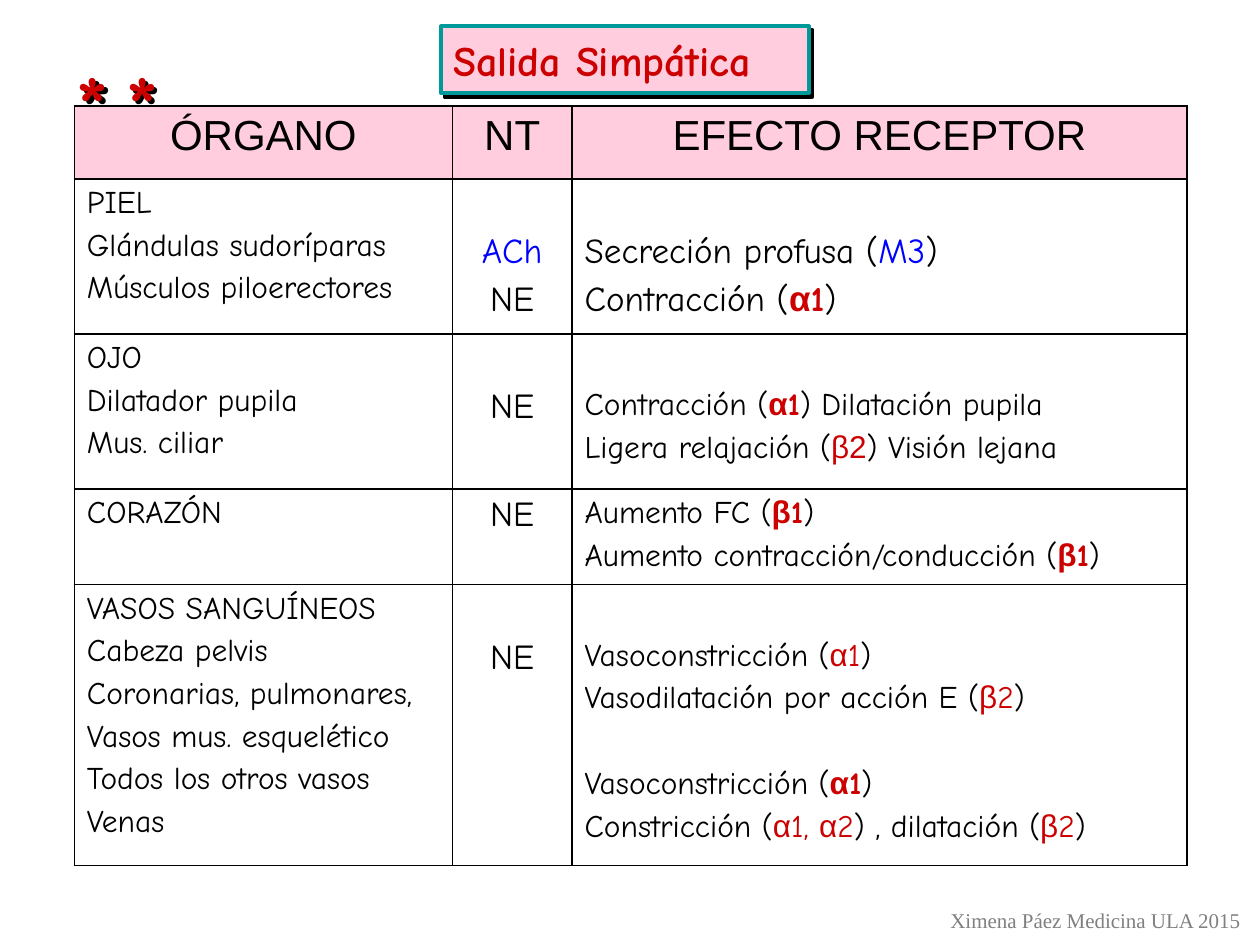
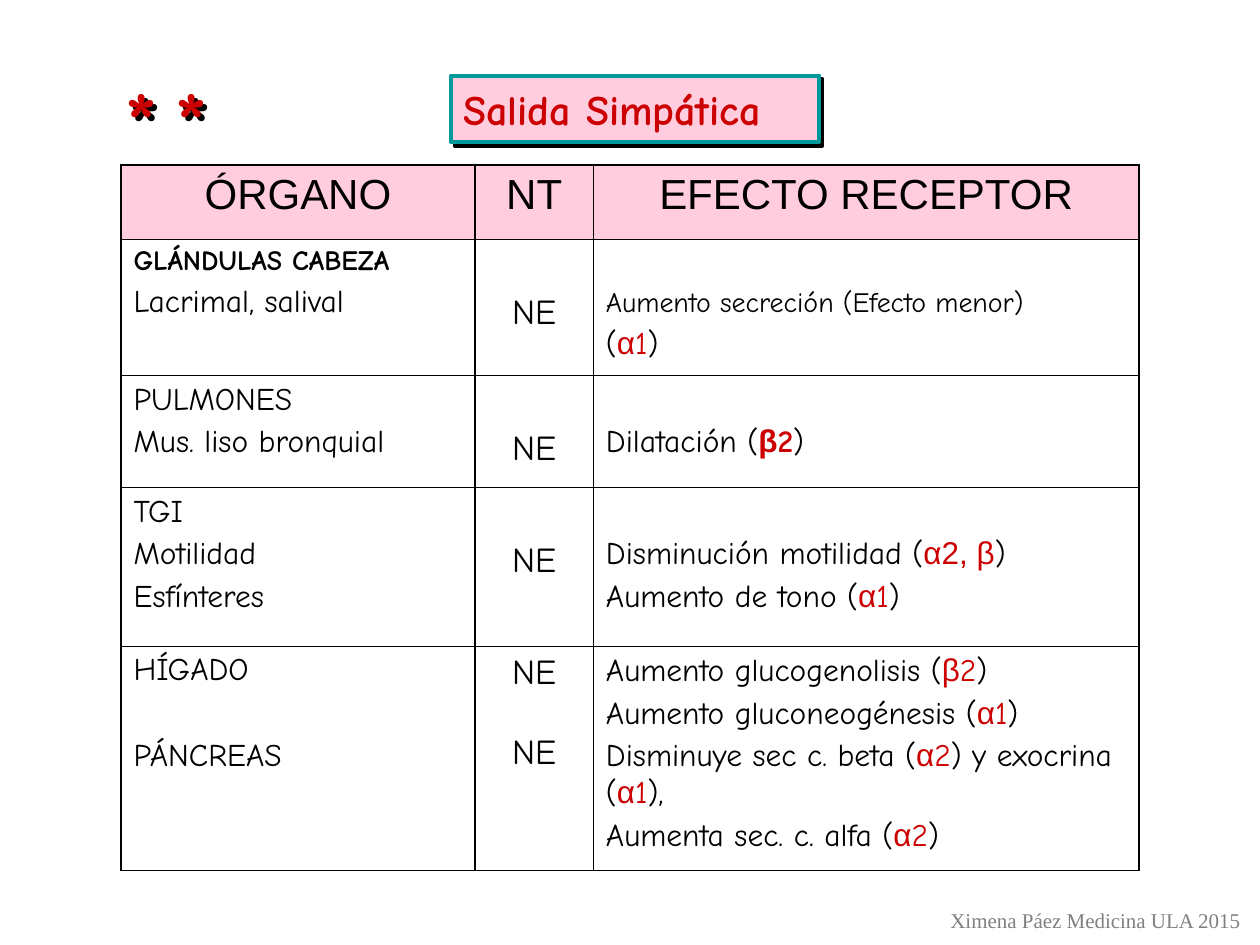
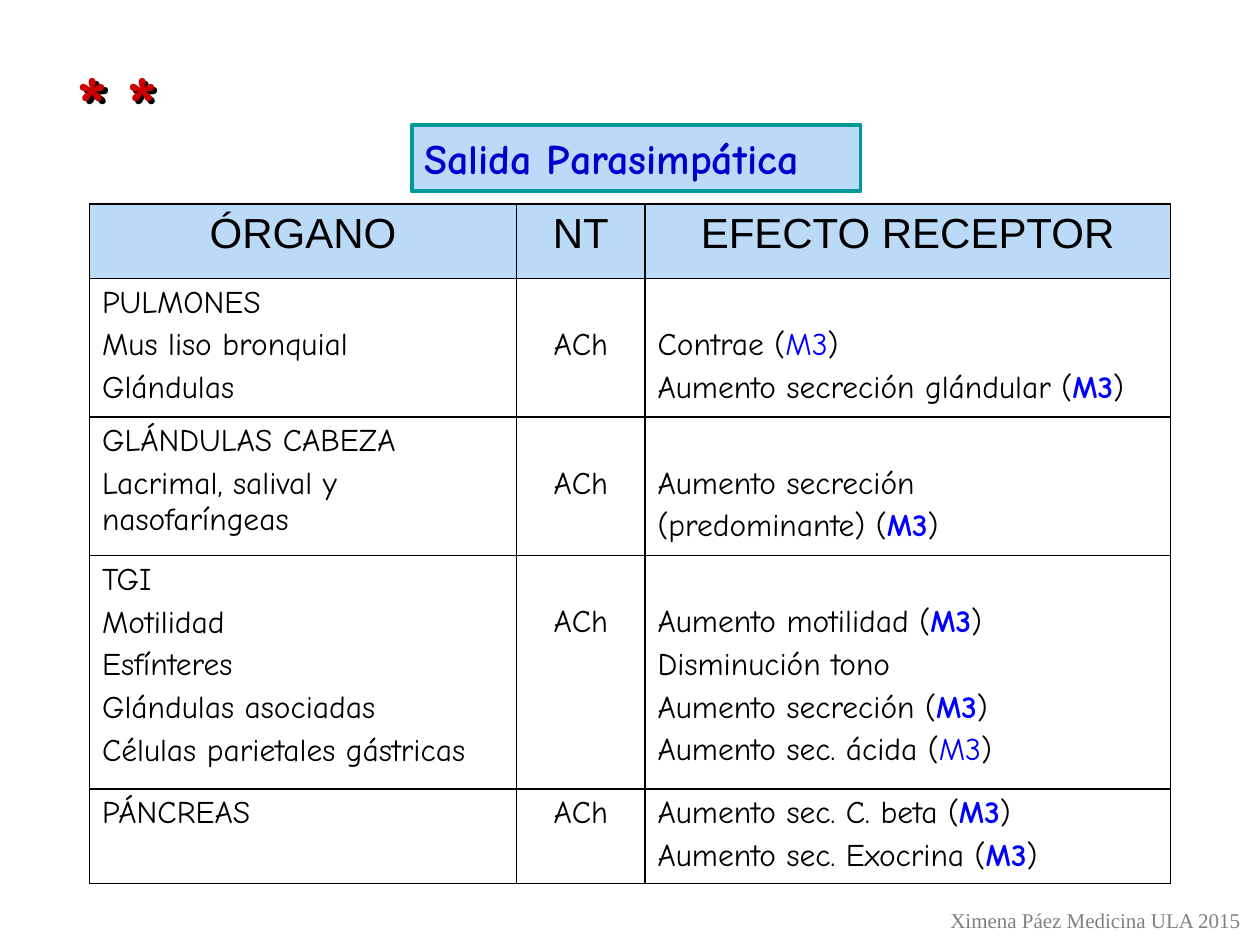
from itertools import groupby

from lxml import etree
from pptx import Presentation
from pptx import util as u
from pptx.dml.color import RGBColor
from pptx.enum import shapes, text
from pptx.oxml.ns import qn

BLACK = RGBColor(0x00, 0x00, 0x00)
RED = RGBColor(0xCC, 0x00, 0x00)
BLUE = RGBColor(0x00, 0x00, 0xFF)
NAVY = RGBColor(0x00, 0x00, 0xCC)
TEAL = RGBColor(0x00, 0x99, 0x99)
GRAY = RGBColor(0x80, 0x80, 0x80)
PINK = RGBColor(0xFF, 0xCD, 0xDE)
SKY = RGBColor(0xBB, 0xDA, 0xF7)

HAND, SANS, SERIF = "Comic Neue", "Arial", "Times New Roman"
GREEK = "αβ"
HEADINGS = ("ÓRGANO", "NT", "EFECTO RECEPTOR")
COLUMNS, ROWS = 100, 75
LINE, GAP = 1.15, 0.2  # line height and paragraph gap, as shares of the text size


class Sheet:
    """The shared style and the slide being filled, on a grid of 100 by 75."""

    def __init__(self):
        self.deck = Presentation()
        self.deck.slide_width, self.deck.slide_height = u.Inches(10), u.Inches(7.5)
        self.slide = None

    def across(self, columns):
        return round(self.deck.slide_width * columns / COLUMNS)

    def down(self, rows):
        return round(self.deck.slide_height * rows / ROWS)

    def place(self, left, top, width, height):
        return self.across(left), self.down(top), self.across(width), self.down(height)

    def start(self):
        self.slide = self.deck.slides.add_slide(self.deck.slide_layouts[6])

    def span(self, para, words, size, color=BLACK, font=HAND, bold=False):
        run = para.add_run()
        run.text = words
        run.font.size, run.font.name, run.font.bold = u.Pt(size), font, bold
        run.font.color.rgb = color

    def drop_shadow(self, shape):
        shape.shadow.inherit = False
        effects = shape.element.spPr.find(qn("a:effectLst"))
        shadow = etree.SubElement(effects, qn("a:outerShdw"), dist=str(u.Pt(2.8)),
                                  dir="2700000", algn="ctr", rotWithShape="0")
        etree.SubElement(shadow, qn("a:srgbClr"), val=str(BLACK))

    def title(self, words, place, fill, color, shadow):
        box = self.slide.shapes.add_shape(shapes.MSO_SHAPE.RECTANGLE, *self.place(*place))
        box.shadow.inherit = False
        box.fill.solid()
        box.fill.fore_color.rgb = fill
        box.line.color.rgb, box.line.width = TEAL, u.Pt(2.25)
        if shadow:
            self.drop_shadow(box)
        frame = box.text_frame
        frame.word_wrap = True
        frame.vertical_anchor = text.MSO_ANCHOR.MIDDLE
        frame.paragraphs[0].alignment = text.PP_ALIGN.LEFT
        self.span(frame.paragraphs[0], words, 24, color, bold=True)

    def label(self, words, place, size, color, font, align, bold=False):
        box = self.slide.shapes.add_textbox(*self.place(*place))
        box.text_frame.word_wrap = False
        para = box.text_frame.paragraphs[0]
        para.alignment = align
        self.span(para, words, size, color, font, bold)
        return box

    def stars(self, left, top):
        for step in range(2):
            star = self.label("*", (left + 3.95 * step, top, 5.5, 9), 48, RED, HAND,
                              text.PP_ALIGN.LEFT, bold=True)
            self.drop_shadow(star)

    def footer(self):
        self.label("Ximena Páez Medicina ULA 2015", (74.3, 71.5, 25.3, 3), 12, GRAY,
                   SERIF, text.PP_ALIGN.CENTER)

    def marked(self, para, line, size):
        """Receptors stand between bars; * makes a part bold, = sets it all in Arial."""
        for index, part in enumerate(line.split("|")):
            bold, plain = part.startswith("*"), part.startswith("=")
            part = part.lstrip("*=")
            color = BLACK
            if index % 2:
                color = BLUE if part in ("M3", "ACh") else RED
            for greek, letters in groupby(part, lambda letter: letter in GREEK):
                font = SANS if greek or plain else HAND
                self.span(para, "".join(letters), size, color, font, bold)

    def fill_cell(self, cell, lines, size, align):
        """A number among the lines skips one line of that text size."""
        para, skipped = None, 0
        for line in lines:
            if isinstance(line, int):
                skipped = line
                continue
            points, words = line if isinstance(line, tuple) else (size, line)
            space = GAP * points + LINE * skipped
            if para is None:
                para = cell.text_frame.paragraphs[0]
                if skipped:
                    cell.margin_top = u.Inches(0.05) + u.Pt(space)
            else:
                para = cell.text_frame.add_paragraph()
                para.space_before = u.Pt(space + GAP * skipped)
            para.alignment = align
            self.marked(para, words, points)
            skipped = 0

    def borders(self, cell):
        properties = cell._tc.get_or_add_tcPr()
        for index, side in enumerate(("lnL", "lnR", "lnT", "lnB")):
            edge = etree.Element(qn("a:" + side), w=str(u.Pt(1)))
            fill = etree.SubElement(edge, qn("a:solidFill"))
            etree.SubElement(fill, qn("a:srgbClr"), val=str(BLACK))
            properties.insert(index, edge)

    def table(self, left, top, widths, heights, fill, sizes, organs):
        place = self.place(left, top, sum(widths), sum(heights))
        table = self.slide.shapes.add_table(len(heights), len(widths), *place).table
        table.first_row = table.horz_banding = False
        for column, width in zip(table.columns, widths):
            column.width = self.across(width)
        for row, height in zip(table.rows, heights):
            row.height = self.down(height)
        for cell, heading in zip(table.rows[0].cells, HEADINGS):
            cell.fill.solid()
            cell.fill.fore_color.rgb = fill
            para = cell.text_frame.paragraphs[0]
            para.alignment = text.PP_ALIGN.CENTER
            self.span(para, heading, 24, font=SANS)
        aligns = (text.PP_ALIGN.LEFT, text.PP_ALIGN.CENTER, text.PP_ALIGN.LEFT)
        for row, organ in enumerate(organs, 1):
            for column, lines in enumerate(organ):
                cell = table.cell(row, column)
                cell.fill.background()
                self.fill_cell(cell, lines, sizes[column], aligns[column])
        for cell in table.iter_cells():
            self.borders(cell)


SKIN_TO_VESSELS = [
    (["PIEL", "Glándulas sudoríparas", "Músculos piloerectores"],
     [20, "|ACh|", "NE"],
     [20, (20, "Secreción profusa (|M3|)"), (20, "Contracción (|*α1|)")]),
    (["OJO", "Dilatador pupila", "Mus. ciliar"],
     [20, "NE"],
     [20, "Contracción (|*α1|) Dilatación pupila",
      "Ligera relajación (|=β2|) Visión lejana"]),
    (["CORAZÓN"],
     ["NE"],
     ["Aumento FC (|*β1|)", "Aumento contracción/conducción (|*β1|)"]),
    (["VASOS SANGUÍNEOS", "Cabeza pelvis", "Coronarias, pulmonares,",
      "Vasos mus. esquelético", "Todos los otros vasos", "Venas"],
     [20, "NE"],
     [20, "Vasoconstricción (|α1|)", "Vasodilatación por acción E (|β2|)", 18,
      "Vasoconstricción (|*α1|)", "Constricción (|α1, α2|) , dilatación (|β2|)"]),
]

GLANDS_TO_PANCREAS = [
    ([(16, "*GLÁNDULAS CABEZA"), "Lacrimal, salival"],
     [20, "NE"],
     [18, (16, "Aumento secreción (Efecto menor)"), "(|α1|)"]),
    (["PULMONES", "Mus. liso bronquial"],
     [20, "NE"],
     [18, "Dilatación (|*β2|)"]),
    (["TGI", "Motilidad", "Esfínteres"],
     [20, "NE"],
     [18, "Disminución motilidad (|=α2, β|)", "Aumento de tono (|α1|)"]),
    (["HÍGADO", 18, "PÁNCREAS"],
     ["NE", 14, "NE"],
     ["Aumento glucogenolisis (|β2|)", "Aumento gluconeogénesis (|α1|)",
      "Disminuye sec c. beta (|α2|) y exocrina (|α1|),",
      "Aumenta sec. c. alfa (|α2|)"]),
]

PARASYMPATHETIC = [
    (["PULMONES", "Mus liso bronquial", "Glándulas"],
     [18, "ACh"],
     [18, "Contrae (|M3|)", "Aumento secreción glándular (|*M3|)"]),
    (["GLÁNDULAS CABEZA", "Lacrimal, salival y nasofaríngeas"],
     [18, "ACh"],
     [18, "Aumento secreción", "(predominante) (|*M3|)"]),
    (["TGI", "Motilidad", "Esfínteres", "Glándulas asociadas",
      "Células parietales gástricas"],
     [18, "ACh"],
     [18, "Aumento motilidad (|*M3|)", "Disminución tono",
      "Aumento secreción (|*M3|)", "Aumento sec. ácida (|M3|)"]),
    (["PÁNCREAS"],
     ["ACh"],
     ["Aumento sec. C. beta (|*M3|)", "Aumento sec. Exocrina (|*M3|)"]),
]


def main():
    sheet = Sheet()

    sheet.start()
    sheet.title("Salida Simpática", (35, 2.1, 29.2, 5.3), PINK, RED, shadow=True)
    sheet.table(5.9, 8.4, (30, 9.5, 48.8), (5.8, 12.3, 12.3, 7.6, 22.3), PINK,
                (18, 20, 18), SKIN_TO_VESSELS)
    sheet.stars(5.1, 3.6)
    sheet.footer()

    sheet.start()
    sheet.table(9.6, 13.1, (28.1, 9.4, 43.3), (5.9, 10.8, 8.9, 12.6, 17.8), PINK,
                (18, 20, 18), GLANDS_TO_PANCREAS)
    sheet.stars(9, 4.9)
    sheet.title("Salida Simpática", (35.8, 6, 29.2, 5.3), PINK, RED, shadow=True)
    sheet.footer()

    sheet.start()
    sheet.table(7.1, 16.2, (33.9, 10.2, 41.7), (5.9, 11, 11, 18.5, 7.5), SKY,
                (18, 18, 18), PARASYMPATHETIC)
    sheet.stars(5.1, 3.6)
    sheet.title("Salida Parasimpática", (32.7, 9.9, 35.6, 5.3), SKY, NAVY, shadow=False)
    sheet.footer()

    sheet.deck.save("out.pptx")


if __name__ == "__main__":
    main()
